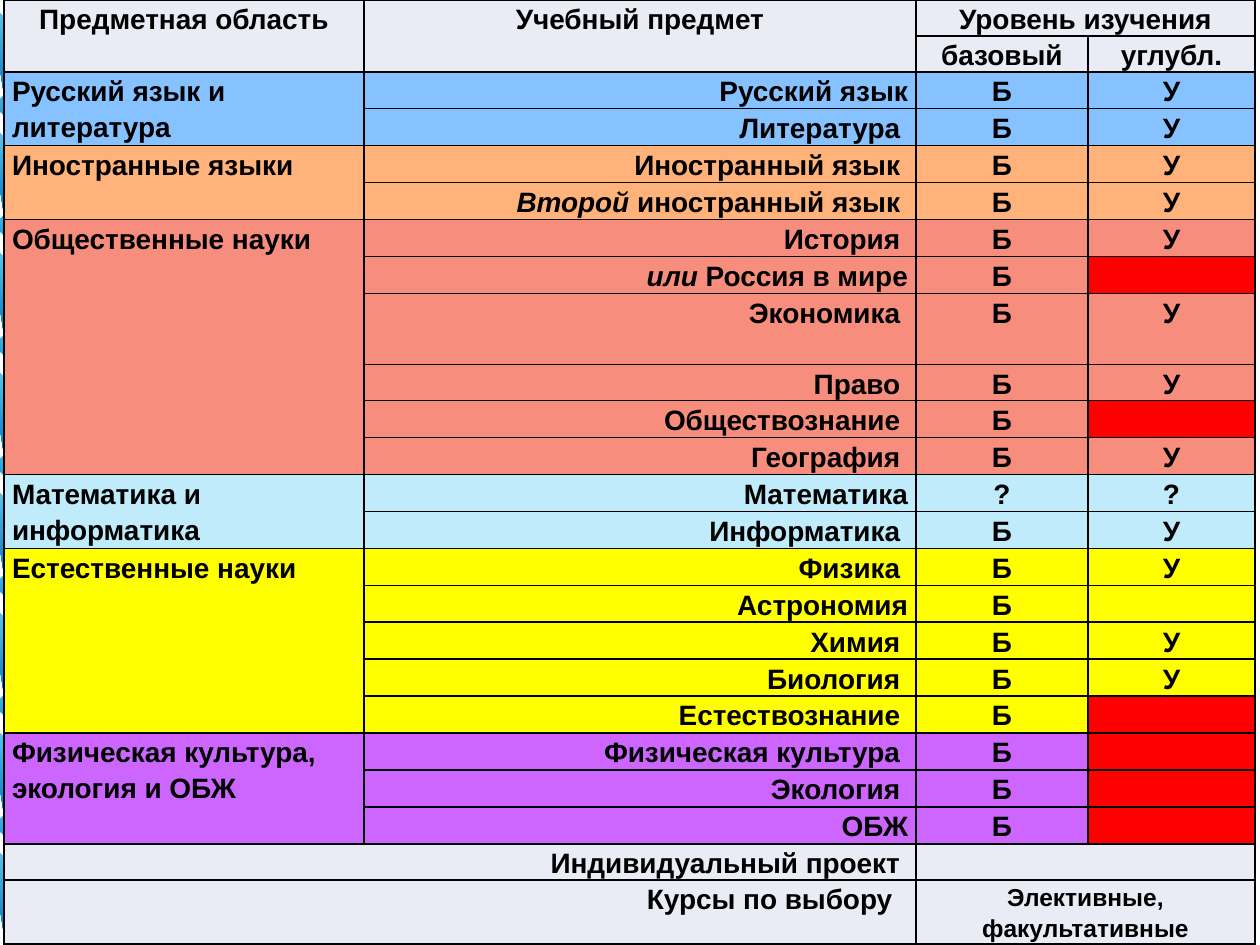
from pptx import Presentation
from pptx.dml.color import RGBColor
from pptx.enum.text import PP_ALIGN
from pptx.oxml import parse_xml
from pptx.oxml.ns import nsdecls
from pptx.util import Pt

SCALE = 914400 / 126
BLACK = RGBColor(0x00, 0x00, 0x00)
PALE = RGBColor(0xE9, 0xEB, 0xF5)
BLUE = RGBColor(0x85, 0xC2, 0xFF)
ORANGE = RGBColor(0xFF, 0xB3, 0x7A)
SALMON = RGBColor(0xF7, 0x8D, 0x7C)
AQUA = RGBColor(0xBF, 0xEB, 0xFA)
YELLOW = RGBColor(0xFF, 0xFF, 0x00)
PURPLE = RGBColor(0xCC, 0x66, 0xFF)
RED = RGBColor(0xFF, 0x00, 0x00)
SKY = RGBColor(0x5E, 0xCC, 0xF3)
DEEP_BLUE = RGBColor(0x00, 0x70, 0xC0)

# Area, colour, subjects: (name, basic level, advanced level); "|" ends an italic opening,
# None marks a level that is not offered
AREAS = [
    ("Русский язык и литература", BLUE, [
        ("Русский язык", "Б", "У"), ("Литература ", "Б", "У")]),
    ("Иностранные языки", ORANGE, [
        ("Иностранный язык ", "Б", "У"), ("Второй| иностранный язык ", "Б", "У")]),
    ("Общественные науки", SALMON, [
        ("История ", "Б", "У"), ("или| Россия в мире", "Б", None),
        ("Экономика ", "Б", "У"), ("Право ", "Б", "У"),
        ("Обществознание ", "Б", None), ("География ", "Б", "У")]),
    ("Математика и информатика", AQUA, [
        ("Математика", "?", "?"), ("Информатика ", "Б", "У")]),
    ("Естественные науки", YELLOW, [
        ("Физика ", "Б", "У"), ("Астрономия", "Б", ""), ("Химия ", "Б", "У"),
        ("Биология ", "Б", "У"), ("Естествознание ", "Б", None)]),
    ("Физическая культура,\nэкология и ОБЖ", PURPLE, [
        ("Физическая культура ", "Б", None), ("Экология ", "Б", None), ("ОБЖ", "Б", None)]),
]
COLUMN_WIDTHS = [360, 552, 172, 167]
ROW_HEIGHTS = [36, 35] + [37] * 6 + [71, 36] + [37] * 12 + [36, 64]


def px(value):
    return round(value * SCALE)


def fill_cell(cell, text, color, alignment=PP_ALIGN.CENTER, size=16):
    cell.margin_left = cell.margin_right = px(8)
    cell.margin_top = cell.margin_bottom = 0
    cell.fill.solid()
    cell.fill.fore_color.rgb = color
    opening, bar, rest = text.partition("|")
    cell.text_frame.text = opening
    if bar:
        first_paragraph = cell.text_frame.paragraphs[0]
        first_paragraph.runs[0].font.italic = True
        first_paragraph.add_run().text = rest
    for paragraph in cell.text_frame.paragraphs:
        paragraph.alignment = alignment
        paragraph.line_spacing = 1.15
        paragraph.font.name = "Arial"
        paragraph.font.size = Pt(size)
        paragraph.font.bold = True
        paragraph.font.color.rgb = BLACK


presentation = Presentation()
presentation.slide_width = px(1260)
presentation.slide_height = px(945)
slide = presentation.slides.add_slide(presentation.slide_layouts[6])

# Triangles along the left edge
TRIANGLES = [
    (8, 3, [(47, 61), (-10, 3), (5, 101)]),
    (7, 64, [(36, 64), (-6, 105), (51, 163)]),
]
for count, top, corners in TRIANGLES:
    for index in range(count):
        points = [(x, y + index * 120) for x, y in corners]
        builder = slide.shapes.build_freeform(*points[0], scale=SCALE)
        builder.add_line_segments(points[1:], close=True)
        triangle = builder.convert_to_shape()
        triangle.shadow.inherit = False
        triangle.line.fill.background()
        triangle.fill.gradient()
        triangle.fill.gradient_angle = 270
        for stop, color in zip(triangle.fill.gradient_stops, (SKY, DEEP_BLUE)):
            stop.color.rgb = color

# Table grid
table = slide.shapes.add_table(
    len(ROW_HEIGHTS), len(COLUMN_WIDTHS), px(4), 0,
    px(sum(COLUMN_WIDTHS)), px(sum(ROW_HEIGHTS))).table
table.first_row = table.horz_banding = False
for column, width in zip(table.columns, COLUMN_WIDTHS):
    column.width = px(width)
for row, height in zip(table.rows, ROW_HEIGHTS):
    row.height = px(height)

# Header
for column, text in enumerate(("Предметная область", "Учебный предмет", "Уровень изучения")):
    fill_cell(table.cell(0, column), text, PALE)
fill_cell(table.cell(1, 2), "базовый", PALE)
fill_cell(table.cell(1, 3), "углубл.", PALE)
for column in (0, 1):
    table.cell(0, column).merge(table.cell(1, column))
table.cell(0, 2).merge(table.cell(0, 3))

# Subject areas
row = 2
for area, color, subjects in AREAS:
    fill_cell(table.cell(row, 0), area, color, PP_ALIGN.LEFT)
    table.cell(row, 0).merge(table.cell(row + len(subjects) - 1, 0))
    for subject, basic, advanced in subjects:
        fill_cell(table.cell(row, 1), subject, color, PP_ALIGN.RIGHT)
        fill_cell(table.cell(row, 2), basic, color)
        fill_cell(table.cell(row, 3), advanced or "", RED if advanced is None else color)
        row += 1

# Closing rows
CLOSING_ROWS = [
    ("Индивидуальный проект ", ""),
    ("Курсы по выбору  ", "Элективные, факультативные"),
]
for row, (title, note) in enumerate(CLOSING_ROWS, start=row):
    fill_cell(table.cell(row, 0), title, PALE, PP_ALIGN.RIGHT)
    fill_cell(table.cell(row, 2), note, PALE, size=14)
    for column in (0, 2):
        table.cell(row, column).merge(table.cell(row, column + 1))

# Cell borders
for cell in table.iter_cells():
    properties = cell._tc.get_or_add_tcPr()
    for position, side in enumerate(("lnL", "lnR", "lnT", "lnB")):
        properties.insert(position, parse_xml(
            f'<a:{side} {nsdecls("a")} w="12700"><a:solidFill>'
            f'<a:srgbClr val="{BLACK}"/></a:solidFill></a:{side}>'))

presentation.save("out.pptx")
